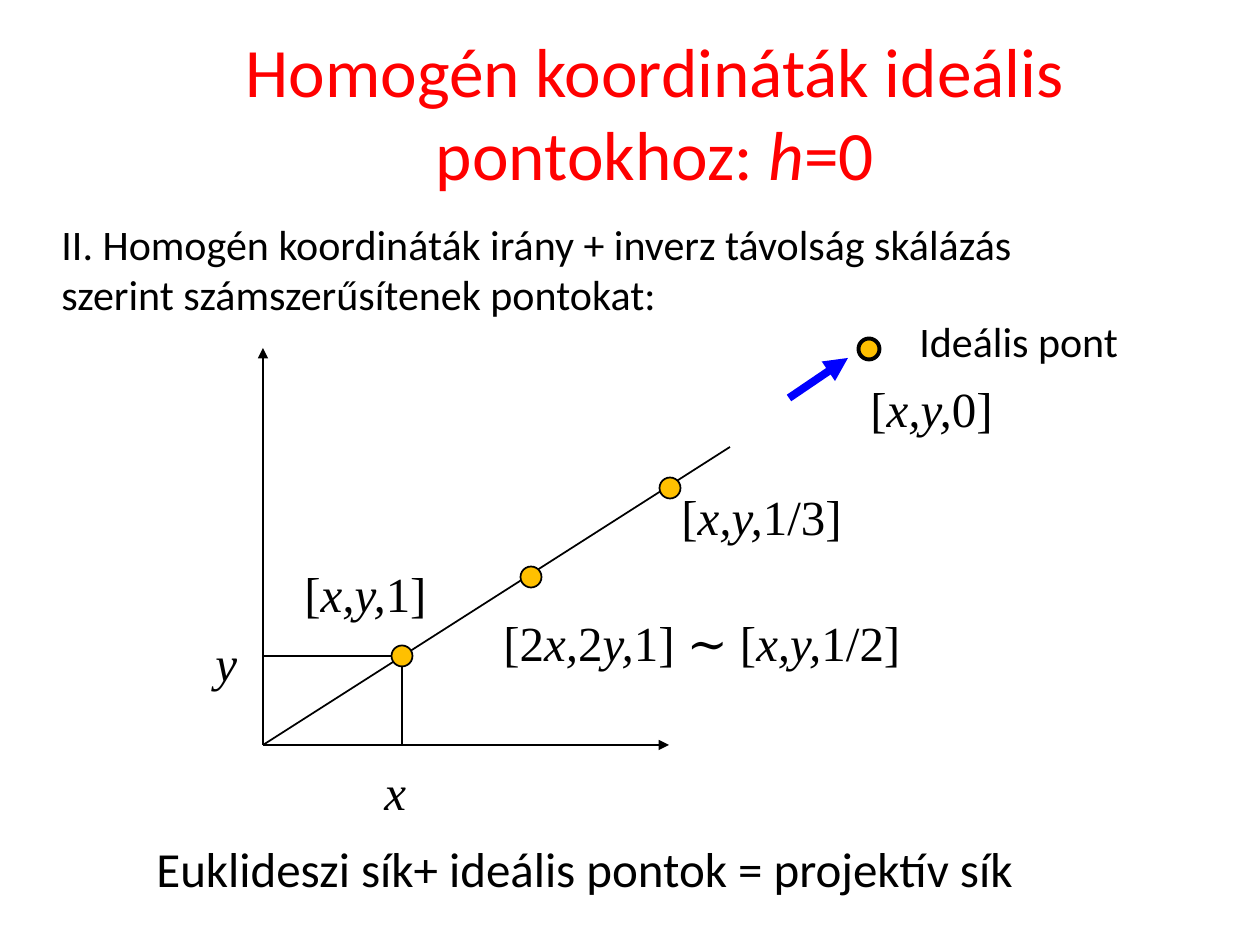
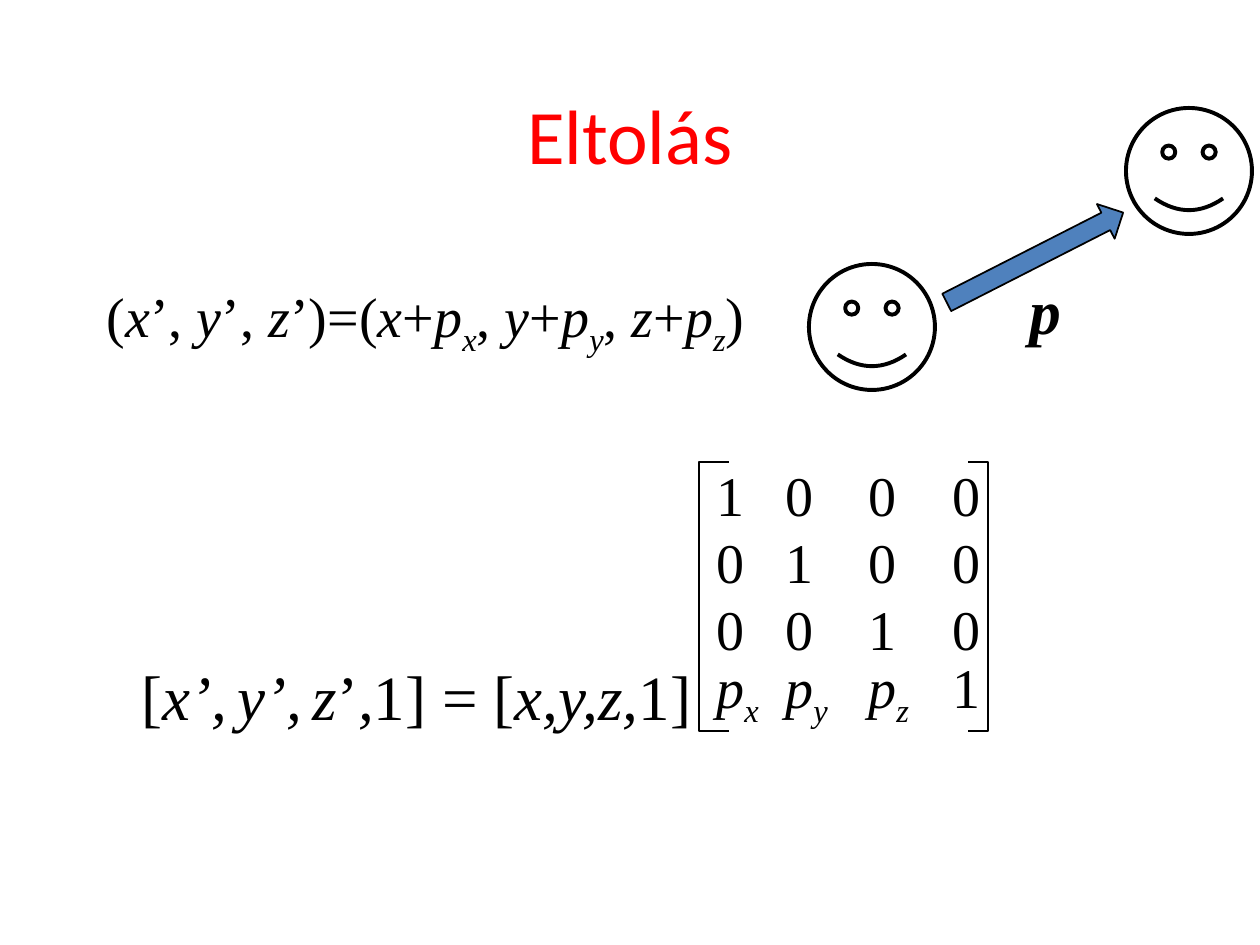
from lxml import etree
from pptx import Presentation
from pptx.dml.color import RGBColor
from pptx.enum.shapes import MSO_CONNECTOR, MSO_SHAPE
from pptx.enum.text import MSO_ANCHOR, MSO_AUTO_SIZE, PP_ALIGN
from pptx.oxml.ns import qn
from pptx.util import Emu, Pt

PX = 914400 / 126
SLIDE_SIZE = (1260, 945)
TITLE_AND_BODY, TITLE_ONLY = 1, 5
BLACK, RED, BLUE = "000000", "FF0000", "0000FF"
AMBER, STEEL = "FFC000", "4F81BD"
SANS, SERIF = "Calibri", "Times New Roman"
STRAIGHT = MSO_CONNECTOR.STRAIGHT
ELLIPSE, SMILEY, ARROW = MSO_SHAPE.OVAL, MSO_SHAPE.SMILEY_FACE, MSO_SHAPE.RIGHT_ARROW
MIDDLE, TOP = MSO_ANCHOR.MIDDLE, MSO_ANCHOR.TOP
CENTER, LEFT = PP_ALIGN.CENTER, PP_ALIGN.LEFT
FIXED, GROW = MSO_AUTO_SIZE.NONE, MSO_AUTO_SIZE.SHAPE_TO_FIT_TEXT


def px(length):
    """Turn pixels into EMU."""
    return Emu(round(length * PX))


def color(hex_code):
    """Turn a hex string into a colour."""
    return RGBColor.from_string(hex_code)


def apply(target, formats):
    """Set each attribute named in formats on the target."""
    for name, value in formats.items():
        setattr(target, name, value)


def add_xml(parent, tag, **attributes):
    """Append a child element with the given attributes."""
    return etree.SubElement(parent, qn(tag), attributes)


def write(paragraph, markup, size, font=SERIF, ink=BLACK, bold=False):
    """Write runs: asterisks enclose italics, underscores enclose subscripts."""
    for i, slanted in enumerate(markup.split("*")):
        for j, piece in enumerate(slanted.split("_")):
            if not piece:
                continue
            run = paragraph.add_run()
            run.text = piece
            apply(run.font, {"name": font, "size": Pt(size), "bold": bold,
                             "italic": i % 2 == 1})
            run.font.color.rgb = color(ink)
            if j % 2:
                run.font._element.set("baseline", "-25000")


def place(shape, box):
    """Move and size a shape to a pixel box."""
    apply(shape, dict(zip(("left", "top", "width", "height"), map(px, box))))


def set_title(slide, box, markup, size):
    """Fill the title placeholder in the shared style."""
    title = slide.shapes.title
    place(title, box)
    apply(title.text_frame, {"word_wrap": True, "auto_size": FIXED,
                             "vertical_anchor": MIDDLE})
    paragraph = title.text_frame.paragraphs[0]
    paragraph.alignment = CENTER
    write(paragraph, markup, size, SANS, RED)


def set_body(slide, box, markup, size):
    """Fill the body placeholder with one unbulleted line."""
    body = slide.placeholders[1]
    place(body, box)
    apply(body.text_frame, {"word_wrap": True, "auto_size": FIXED,
                            "vertical_anchor": TOP})
    paragraph = body.text_frame.paragraphs[0]
    properties = paragraph._p.get_or_add_pPr()
    properties.set("marL", "0")
    properties.set("indent", "0")
    add_xml(properties, "a:buNone")
    write(paragraph, markup, size)


def add_label(slide, box, markup, size, wrap=False, **style):
    """Add a text box that grows with its text and return its paragraph."""
    label = slide.shapes.add_textbox(*map(px, box))
    apply(label.text_frame, {"word_wrap": wrap, "auto_size": GROW})
    paragraph = label.text_frame.paragraphs[0]
    write(paragraph, markup, size, **style)
    return paragraph


def outline(shape, width, ink=BLACK):
    """Give a shape or connector its line."""
    shape.line.width = Pt(width)
    shape.line.color.rgb = color(ink)


def add_line(slide, start, end, width=1, ink=BLACK, arrow=False):
    """Draw a straight line, with an arrowhead at its end if asked."""
    line = slide.shapes.add_connector(STRAIGHT, *map(px, start + end))
    outline(line, width, ink)
    if arrow:
        add_xml(line.line._get_or_add_ln(), "a:tailEnd", type="triangle")
    add_xml(line._element.spPr, "a:effectLst")


def add_figure(slide, preset, box, fill=None, width=1.0, rotation=0):
    """Add an outlined preset shape, unfilled unless a fill is given."""
    figure = slide.shapes.add_shape(preset, *map(px, box))
    figure.shadow.inherit = False
    figure.rotation = rotation
    outline(figure, width)
    if fill:
        figure.fill.solid()
        figure.fill.fore_color.rgb = color(fill)
    else:
        figure.fill.background()


def add_point(slide, center, width=1.0):
    """Mark a point of the plane with a dot."""
    diameter = 21
    x, y = center
    add_figure(slide, ELLIPSE, (x - diameter / 2, y - diameter / 2, diameter, diameter),
               AMBER, width)


def add_bracket(slide, tip, spine, top, bottom):
    """Draw a square matrix bracket."""
    builder = slide.shapes.build_freeform(tip, bottom, scale=PX)
    builder.add_line_segments([(spine, bottom), (spine, top), (tip, top)], close=False)
    bracket = builder.convert_to_shape()
    bracket.shadow.inherit = False
    bracket.fill.background()
    outline(bracket, 1)


def add_matrix(slide, box, rows, column_stops, size, pitch):
    """Set matrix rows in tabbed columns between two brackets."""
    frame = slide.shapes.add_textbox(*map(px, box)).text_frame
    apply(frame, {"word_wrap": True, "auto_size": GROW})
    for index, row in enumerate(rows):
        paragraph = frame.add_paragraph() if index else frame.paragraphs[0]
        apply(paragraph, {"alignment": LEFT, "line_spacing": Pt(pitch)})
        stops = add_xml(paragraph._p.get_or_add_pPr(), "a:tabLst")
        for stop in column_stops:
            add_xml(stops, "a:tab", pos=str(px(stop)), algn="l")
        write(paragraph, "\t".join(row), size)
    for tip, spine in ((729, 699), (968, 988)):
        add_bracket(slide, tip, spine, 462, 731)


def build_ideal_points(deck):
    """Build the slide on homogeneous coordinates of ideal points."""
    slide = deck.slides.add_slide(deck.slide_layouts[TITLE_ONLY])
    set_title(slide, (184, 32, 942, 158),
              "Homogén koordináták ideális pontokhoz: *h*=0", 39.6)
    origin, unit_point = (263, 745), (402, 656)
    unit_x, unit_y = unit_point
    add_line(slide, origin, (263, 348), arrow=True)
    add_line(slide, origin, (669, 745), arrow=True)
    add_line(slide, unit_point, (unit_x, 745))
    add_line(slide, unit_point, (263, unit_y))
    add_line(slide, origin, (730, 447))
    add_line(slide, (789, 398), (848, 358), 4.5, BLUE, arrow=True)
    for center in (unit_point, (531, 577), (670, 488)):
        add_point(slide, center)
    add_point(slide, (869, 349), 2.25)

    coordinates = (
        ((372, 755, 47, 72), "*x*"),
        ((203, 626, 47, 72), "*y*"),
        ((292, 557, 149, 72), "[*x,y,*1]"),
        ((491, 606, 423, 72), "[2*x,*2*y,*1] ∼ [*x,y,*1/2]"),
        ((669, 480, 188, 72), "[*x,y,*1/3]"),
        ((858, 372, 161, 72), "[*x,y,*0]"),
    )
    for box, markup in coordinates:
        add_label(slide, box, markup, 28)
    add_label(slide, (144, 832, 924, 72),
              "Euklideszi sík+ ideális pontok = projektív sík", 28, font=SANS)
    add_label(slide, (907, 309, 224, 64), "Ideális pont", 24, font=SANS)
    add_label(slide, (49, 212, 1038, 115),
              "II. Homogén koordináták irány + inverz távolság skálázás "
              "szerint számszerűsítenek pontokat:", 24, wrap=True, font=SANS)


def build_translation(deck):
    """Build the slide on translation and its matrix."""
    slide = deck.slides.add_slide(deck.slide_layouts[TITLE_AND_BODY])
    set_title(slide, (0, 55, 1260, 158), "Eltolás", 44)
    set_body(slide, (94, 275, 694, 100),
             "(*x*’,* y*’,* z*’)=(*x*+*p_x_*, *y*+*p_y_*, *z*+*p_z_*)", 32)
    for left, top in ((809, 264), (1126, 108)):
        add_figure(slide, SMILEY, (left, top, 126, 126), width=2.25)
    add_figure(slide, ARROW, (936, 238, 198, 39), STEEL, rotation=333)
    add_label(slide, (1017, 265, 57, 89), "*p*", 36, bold=True)

    equation = add_label(slide, (129, 651, 581, 89),
                         "[*x’,* *y’,* *z*’*,*1] = [*x,y,z,*1]", 36)
    for run in equation.runs:
        if run.text == " ":
            run.font.size = Pt(24)
    identity_rows = [["1" if row == column else "0" for column in range(4)]
                     for row in range(3)]
    offset_row = ["*p_x_*", "*p_y_*", "*p_z_*", "1"]
    add_matrix(slide, (704, 454, 312, 285), identity_rows + [offset_row],
               (69, 152, 236), 32, 38.4)


def main():
    """Build the deck and save it."""
    deck = Presentation()
    apply(deck, dict(zip(("slide_width", "slide_height"), map(px, SLIDE_SIZE))))
    build_ideal_points(deck)
    build_translation(deck)
    deck.save("out.pptx")


if __name__ == "__main__":
    main()
